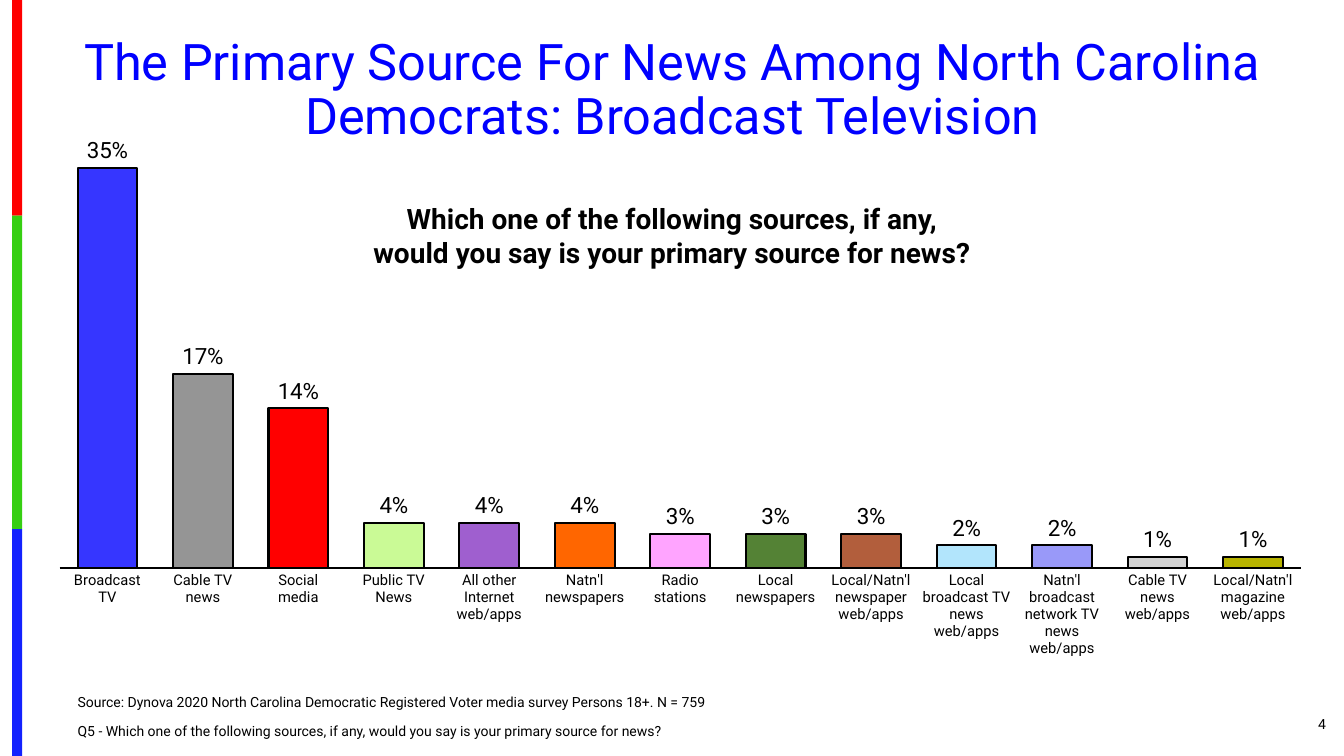
"""Builds the slide on primary news sources among North Carolina Democrats."""
from dataclasses import dataclass

from lxml import etree
from pptx import Presentation
from pptx.chart.data import CategoryChartData
from pptx.dml.color import RGBColor
from pptx.enum.chart import XL_CHART_TYPE, XL_LABEL_POSITION, XL_TICK_MARK
from pptx.enum.shapes import MSO_SHAPE
from pptx.enum.text import MSO_ANCHOR, MSO_AUTO_SIZE, PP_ALIGN
from pptx.oxml.ns import qn
from pptx.util import Inches, Pt

COLUMN = XL_CHART_TYPE.COLUMN_CLUSTERED
OUTSIDE = XL_LABEL_POSITION.OUTSIDE_END
NO_TICK = XL_TICK_MARK.NONE
RECT = MSO_SHAPE.RECTANGLE
LEFT, CENTER, RIGHT = PP_ALIGN.LEFT, PP_ALIGN.CENTER, PP_ALIGN.RIGHT
TOP, MIDDLE, BOTTOM = MSO_ANCHOR.TOP, MSO_ANCHOR.MIDDLE, MSO_ANCHOR.BOTTOM


@dataclass(frozen=True)
class Theme:
    font: str = "Roboto"
    ink: str = "000000"
    title: str = "0000FF"
    bar: str = "CCCCCC"
    title_pt: float = 36
    question_pt: float = 20
    label_pt: float = 16
    axis_pt: float = 10.5
    small_pt: float = 10
    line_pt: float = 1.5


THEME = Theme()
WIDTH, HEIGHT = 13.33, 7.5

TITLE = ["The Primary Source For News Among North Carolina Democrats: Broadcast Television"]
QUESTION = [
    "Which one of the following sources, if any,",
    "would you say is your primary source for news?",
]
FOOTNOTES = [
    "Source: Dynova 2020 North Carolina Democratic Registered Voter media survey Persons 18+. N = 759",
    "Q5 - Which one of the following sources, if any, would you say is your primary source for news?",
]
PAGE = ["4"]

SOURCES = [
    ("Broadcast\nTV", 0.35, "3636FF"),
    ("Cable TV\nnews", 0.17, "959595"),
    ("Social\nmedia", 0.14, "FF0000"),
    ("Public TV\nNews", 0.04, "CAFA96"),
    ("All other Internet web/apps", 0.04, "9F5FCF"),
    ("Natn'l newspapers", 0.04, "FF6600"),
    ("Radio\nstations", 0.03, "FFA4FF"),
    ("Local newspapers", 0.03, "548235"),
    ("Local/Natn'l newspaper web/apps", 0.03, "B25E3C"),
    ("Local\nbroadcast TV news\nweb/apps", 0.02, "B2E5FC"),
    ("Natn'l broadcast network TV news web/apps", 0.02, "9999F9"),
    ("Cable TV news web/apps", 0.01, "D3D3D3"),
    ("Local/Natn'l magazine web/apps", 0.01, "B8B400"),
]
STRIPES = [("FE0000", 2.14), ("36CF12", 3.11), ("1322FE", 2.25)]
STRIPE_LEFT, STRIPE_WIDTH = 0.12, 0.1

CHART_BOX = (0.58, 0.33, 12.42, 6.42)
PLOT = {"x": 0.001, "y": 0.12, "w": 0.991, "h": 0.707}
AXIS_MAX = 0.4
TITLE_BOX = (0.46, 0.31, 12.42, 1.19)
QUESTION_BOX = (3.08, 1.95, 7.17, 0.77)
FOOTNOTE_BOX = (0.67, 6.85, 9.42, 0.54)
PAGE_BOX = (12.17, 6.98, 1.08, 0.4)


def rgb(value):
    return RGBColor.from_string(value)


def place(sp, box):
    sp.left, sp.top, sp.width, sp.height = map(Inches, box)


def style_font(font, size, color=THEME.ink, bold=False):
    font.name, font.size, font.bold = THEME.font, Pt(size), bold
    font.color.rgb = rgb(color)


def write(sp, lines, size, align, anchor, color=THEME.ink, bold=False, leading=1.0, gap=0):
    tf = sp.text_frame
    tf.word_wrap, tf.auto_size, tf.vertical_anchor = True, MSO_AUTO_SIZE.NONE, anchor
    for i, line in enumerate(lines):
        p = tf.add_paragraph() if i else tf.paragraphs[0]
        p.alignment, p.line_spacing = align, leading
        p.space_before = Pt(gap if i else 0)
        r = p.add_run()
        r.text = line
        style_font(r.font, size, color, bold)


def remove_bullets(sp):
    for p in sp.text_frame.paragraphs:
        pPr = p._p.get_or_add_pPr()
        pPr.set("marL", "0")
        pPr.set("indent", "0")
        etree.SubElement(pPr, qn("a:buNone"))


def add_stripes(slide):
    top = 0
    for color, height in STRIPES:
        sp = slide.shapes.add_shape(RECT, 0, 0, 0, 0)
        place(sp, (STRIPE_LEFT, top, STRIPE_WIDTH, height))
        sp.shadow.inherit = False
        sp.fill.solid()
        sp.fill.fore_color.rgb = rgb(color)
        sp.line.fill.background()
        top += height


def outline(line):
    line.color.rgb = rgb(THEME.ink)
    line.width = Pt(THEME.line_pt)


def fix_plot_area(chart):
    space = chart._chartSpace
    spPr = etree.Element(qn("c:spPr"))
    etree.SubElement(spPr, qn("a:noFill"))
    etree.SubElement(etree.SubElement(spPr, qn("a:ln")), qn("a:noFill"))
    space.find(qn("c:chart")).addnext(spPr)

    area = space.find(".//" + qn("c:plotArea"))
    for old in area.findall(qn("c:layout")):
        area.remove(old)
    layout = etree.Element(qn("c:layout"))
    area.insert(0, layout)
    manual = etree.SubElement(layout, qn("c:manualLayout"))
    settings = {"layoutTarget": "inner", "xMode": "edge", "yMode": "edge", **PLOT}
    for tag, value in settings.items():
        etree.SubElement(manual, qn("c:" + tag)).set("val", str(value))


def add_news_chart(slide):
    data = CategoryChartData(number_format="0%")
    data.categories = [name for name, _, _ in SOURCES]
    data.add_series("Series 1", [share for _, share, _ in SOURCES])
    chart = slide.shapes.add_chart(COLUMN, *map(Inches, CHART_BOX), data).chart
    chart.has_legend = chart.has_title = False
    style_font(chart.font, THEME.small_pt)

    values, cats = chart.value_axis, chart.category_axis
    values.minimum_scale, values.maximum_scale = 0, AXIS_MAX
    values.has_major_gridlines = values.visible = False
    cats.major_tick_mark = cats.minor_tick_mark = NO_TICK
    style_font(cats.tick_labels.font, THEME.axis_pt)
    outline(cats.format.line)

    plot = chart.plots[0]
    plot.gap_width, plot.vary_by_categories = 60, False
    series = plot.series[0]
    series.format.fill.solid()
    series.format.fill.fore_color.rgb = rgb(THEME.bar)
    outline(series.format.line)
    for i, (_, _, color) in enumerate(SOURCES):
        fmt = series.points[i].format
        fmt.fill.solid()
        fmt.fill.fore_color.rgb = rgb(color)
        outline(fmt.line)

    labels = series.data_labels
    labels.show_value, labels.position = True, OUTSIDE
    labels.number_format, labels.number_format_is_linked = "0%", False
    style_font(labels.font, THEME.label_pt)
    fix_plot_area(chart)


def main():
    prs = Presentation()
    prs.slide_width, prs.slide_height = Inches(WIDTH), Inches(HEIGHT)
    slide = prs.slides.add_slide(prs.slide_layouts[1])
    add_stripes(slide)
    add_news_chart(slide)

    title, notes = slide.shapes.title, slide.placeholders[1]
    place(title, TITLE_BOX)
    write(title, TITLE, THEME.title_pt, CENTER, MIDDLE, THEME.title, leading=0.9)
    place(notes, FOOTNOTE_BOX)
    write(notes, FOOTNOTES, THEME.small_pt, LEFT, BOTTOM, leading=0.9, gap=10)
    remove_bullets(notes)

    question = slide.shapes.add_textbox(*map(Inches, QUESTION_BOX))
    write(question, QUESTION, THEME.question_pt, CENTER, TOP, bold=True)
    page = slide.shapes.add_textbox(*map(Inches, PAGE_BOX))
    write(page, PAGE, THEME.small_pt, RIGHT, MIDDLE)
    prs.save("out.pptx")


if __name__ == "__main__":
    main()
